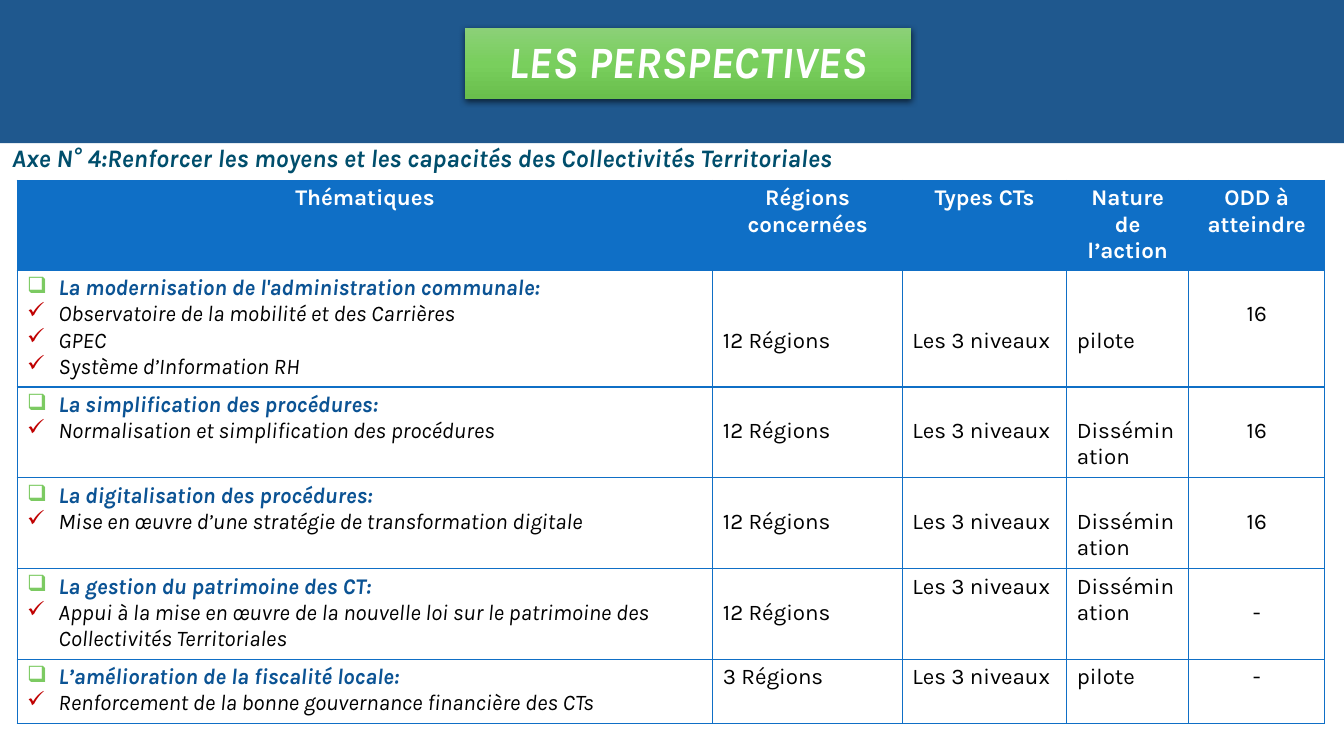
import dataclasses
import typing

import pptx
import pptx.dml.color
import pptx.enum.shapes
import pptx.enum.text
import pptx.oxml
import pptx.oxml.ns
import pptx.util

SCALE = 9144
ALIGN = pptx.enum.text.PP_ALIGN
NS = pptx.oxml.ns.nsdecls("a")


@dataclasses.dataclass(frozen=True)
class Theme:
    font: str = "Karla"
    band: str = "1F588E"
    grid: str = "0F6FC6"
    white: str = "FFFFFF"
    black: str = "000000"
    axis: str = "004E6C"
    topic: str = "0B5394"
    box: str = "7CCA62"
    check: str = "C00000"
    fade: tuple[str, ...] = ("8BD077", "79CF5D", "69BE4C")
    title: int = 32
    lead: int = 18
    body: int = 16


THEME = Theme()


class Style(typing.NamedTuple):
    size: int
    tint: str
    bold: bool = False
    slant: bool = False


class Fact(typing.NamedTuple):
    text: str
    drop: int = 0


class Topic(typing.NamedTuple):
    high: int
    head: str
    points: tuple[str, ...]
    facts: tuple[Fact, ...]


HEADS = ("Thématiques", "Régions concernées", "Types CTs", "Nature de l’action", "ODD à atteindre")
WIDTHS = (690, 188, 163, 121, 135)
HEAD_HIGH = 89
LINE = 26
INSET = 5
INDENT = 31
LEVELS = "Les 3 niveaux"
TOPICS = (
    Topic(116, "La modernisation de l'administration communale:",
          ("Observatoire de la mobilité et des Carrières", "GPEC", "Système d’Information RH"),
          (Fact("12 Régions", 2), Fact(LEVELS, 2), Fact("pilote", 2), Fact("16", 1))),
    Topic(90, "La simplification des procédures:",
          ("Normalisation et simplification des procédures",),
          (Fact("12 Régions", 1), Fact(LEVELS, 1), Fact("Dissémination", 1), Fact("16", 1))),
    Topic(90, "La digitalisation des procédures:",
          ("Mise en œuvre d’une stratégie de transformation digitale",),
          (Fact("12 Régions", 1), Fact(LEVELS, 1), Fact("Dissémination", 1), Fact("16", 1))),
    Topic(90, "La gestion du patrimoine des CT:",
          ("Appui à la mise en œuvre de la nouvelle loi sur le patrimoine des Collectivités Territoriales",),
          (Fact("12 Régions", 1), Fact(LEVELS), Fact("Dissémination"), Fact("-", 1))),
    Topic(64, "L’amélioration de la fiscalité locale:",
          ("Renforcement de la bonne gouvernance financière des CTs",),
          (Fact("3 Régions"), Fact(LEVELS), Fact("pilote"), Fact("-"))),
)


def px(count: int) -> int:
    return pptx.util.Emu(count * SCALE)


def rgb(code: str) -> pptx.dml.color.RGBColor:
    return pptx.dml.color.RGBColor.from_string(code)


def node(xml: str) -> typing.Any:
    return pptx.oxml.parse_xml(xml.replace(">", f" {NS}>", 1))


def write(para: typing.Any, text: str, style: Style) -> None:
    run = para.add_run()
    run.text = text
    font = run.font
    font.name = THEME.font
    font.size = pptx.util.Pt(style.size)
    font.color.rgb = rgb(style.tint)
    font.bold = style.bold
    font.italic = style.slant


def mark(para: typing.Any, sign: str, tint: str) -> None:
    props = para._p.get_or_add_pPr()
    props.set("marL", str(px(INDENT)))
    props.set("indent", str(px(-INDENT)))
    props.append(node(f'<a:buClr><a:srgbClr val="{tint}"/></a:buClr>'))
    props.append(node(f'<a:buChar char="{sign}"></a:buChar>'))


def frame(cell: typing.Any, fill: str) -> None:
    props = cell._tc.get_or_add_tcPr()
    for side in "LRTB":
        props.append(node(
            f'<a:ln{side} w="12700"><a:solidFill><a:srgbClr val="{THEME.grid}"/></a:solidFill></a:ln{side}>'))
    cell.fill.solid()
    cell.fill.fore_color.rgb = rgb(fill)


def draw_band(slide: typing.Any) -> None:
    band = slide.shapes.add_shape(
        pptx.enum.shapes.MSO_SHAPE.RECTANGLE, px(0), px(0), px(1333), px(142))
    band.shadow.inherit = False
    band.fill.solid()
    band.fill.fore_color.rgb = rgb(THEME.band)
    band.line.fill.background()


def draw_grid(slide: typing.Any) -> None:
    high = HEAD_HIGH + sum(topic.high for topic in TOPICS)
    table = slide.shapes.add_table(
        len(TOPICS) + 1, len(HEADS), px(17), px(179), px(sum(WIDTHS)), px(high)).table
    table.horz_banding = False
    for col, wide in zip(table.columns, WIDTHS):
        col.width = px(wide)
    table.rows[0].height = px(HEAD_HIGH)
    for cell, text in zip(table.rows[0].cells, HEADS):
        frame(cell, THEME.grid)
        para = cell.text_frame.paragraphs[0]
        para.alignment = ALIGN.CENTER
        write(para, text, Style(THEME.body, THEME.white, bold=True))
    for num, topic in enumerate(TOPICS, 1):
        table.rows[num].height = px(topic.high)
        draw_row(list(table.rows[num].cells), topic)


def draw_row(cells: list[typing.Any], topic: Topic) -> None:
    for cell in cells:
        frame(cell, THEME.white)
    body = cells[0].text_frame
    para = body.paragraphs[0]
    mark(para, "❑", THEME.box)
    write(para, topic.head, Style(THEME.body, THEME.topic, bold=True, slant=True))
    for point in topic.points:
        para = body.add_paragraph()
        mark(para, "✓", THEME.check)
        write(para, point, Style(THEME.body, THEME.black, slant=True))
    for cell, fact in zip(cells[1:], topic.facts):
        cell.margin_top = px(INSET + fact.drop * LINE)
        para = cell.text_frame.paragraphs[0]
        para.alignment = ALIGN.CENTER if cell is cells[-1] else ALIGN.LEFT
        write(para, fact.text, Style(THEME.body, THEME.black))


def draw_lead(slide: typing.Any) -> None:
    text = slide.shapes.add_textbox(px(2), px(136), px(1312), px(40)).text_frame
    text.word_wrap = True
    write(text.paragraphs[0],
          "Axe N° 4:Renforcer les moyens et les capacités des Collectivités Territoriales",
          Style(THEME.lead, THEME.axis, bold=True, slant=True))


def draw_title(slide: typing.Any) -> None:
    title = slide.shapes.title
    title.left, title.top, title.width, title.height = map(px, (461, 28, 443, 70))
    stops = "".join(f'<a:gs pos="{rank * 50000}"><a:srgbClr val="{tint}"/></a:gs>'
                    for rank, tint in enumerate(THEME.fade))
    props = title.element.spPr
    props.append(node(
        '<a:prstGeom prst="snip2DiagRect"><a:avLst><a:gd name="adj1" fmla="val 0"/>'
        '<a:gd name="adj2" fmla="val 0"/></a:avLst></a:prstGeom>'))
    props.append(node(f'<a:gradFill><a:gsLst>{stops}</a:gsLst><a:lin ang="5400000"/></a:gradFill>'))
    props.append(node(
        '<a:effectLst><a:outerShdw blurRad="57150" dist="19050" dir="5400000">'
        f'<a:srgbClr val="{THEME.black}"><a:alpha val="63000"/></a:srgbClr></a:outerShdw></a:effectLst>'))
    text = title.text_frame
    text.auto_size = pptx.enum.text.MSO_AUTO_SIZE.NONE
    text.vertical_anchor = pptx.enum.text.MSO_ANCHOR.MIDDLE
    para = text.paragraphs[0]
    para.alignment = ALIGN.CENTER
    para.line_spacing = 0.9
    write(para, "LES PERSPECTIVES", Style(THEME.title, THEME.white, bold=True, slant=True))
    slide.shapes.element.append(title.element)


def main() -> None:
    deck = pptx.Presentation()
    deck.slide_width, deck.slide_height = px(1333), px(750)
    slide = deck.slides.add_slide(deck.slide_layouts.get_by_name("Title Only"))
    draw_band(slide)
    draw_grid(slide)
    draw_lead(slide)
    draw_title(slide)
    deck.save("out.pptx")


if __name__ == "__main__":
    main()
